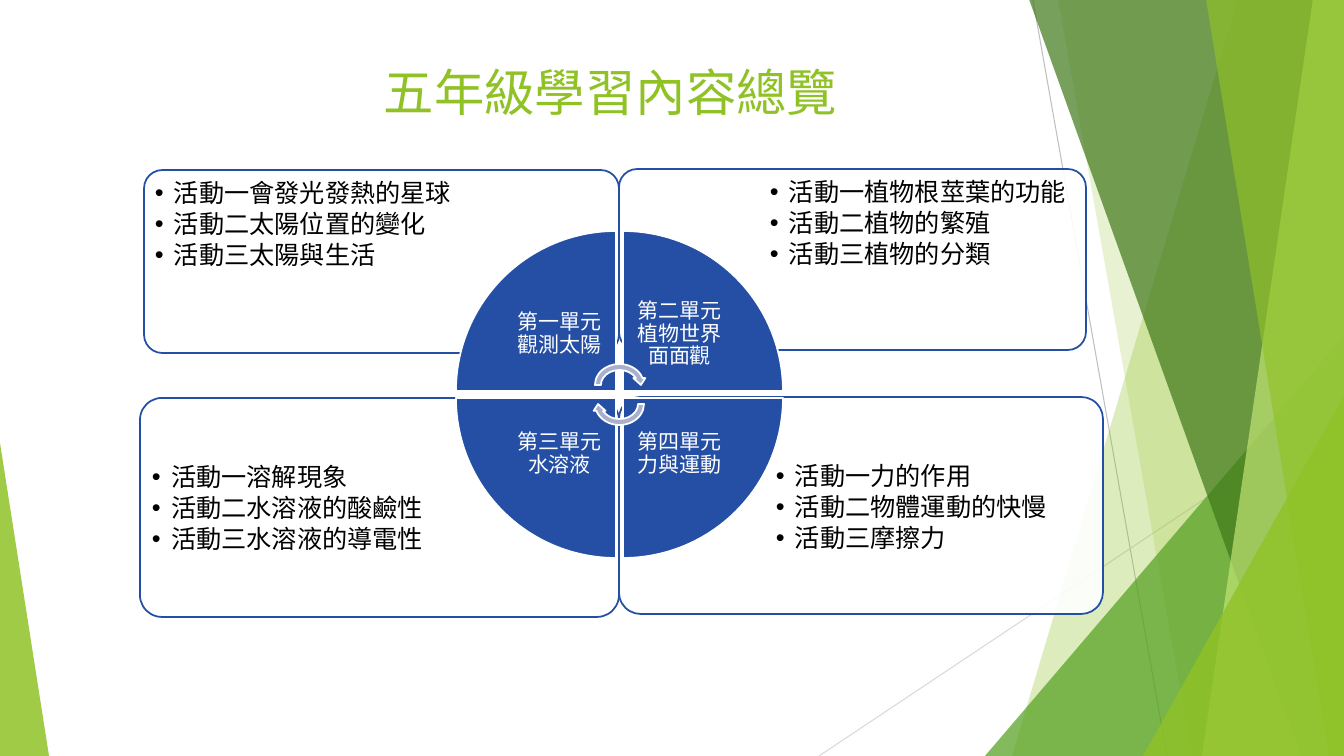
from lxml.etree import SubElement
from pptx import Presentation
from pptx.dml.color import RGBColor
from pptx.enum.shapes import MSO_CONNECTOR, MSO_SHAPE
from pptx.enum.text import MSO_ANCHOR, PP_ALIGN
from pptx.oxml.ns import qn
from pptx.util import Pt

PX = 12192000 / 1344
COLORS = {
    "lime": "90C226", "green": "54A021", "forest": "3F7819", "pale": "C0E474",
    "blue": "244FA4", "arrow": "A9B0CD", "white": "FFFFFF", "black": "000000",
    "gray": "BFBFBF", "light gray": "D9D9D9",
}
RGB = {name: RGBColor.from_string(value) for name, value in COLORS.items()}
BODY_FONT = "TeX Gyre Schola"


def px(*lengths):
    return [round(length * PX) for length in lengths]


def paint(shape, fill, opacity=100, line=None):
    shape.shadow.inherit = False
    shape.fill.solid()
    shape.fill.fore_color.rgb = RGB[fill]
    if opacity < 100:
        color = shape._element.spPr.find(qn("a:solidFill")).find(qn("a:srgbClr"))
        SubElement(color, qn("a:alpha"), val=str(opacity * 1000))
    if line:
        shape.line.color.rgb = RGB[line]
        shape.line.width = Pt(1.25)
    else:
        shape.line.fill.background()


prs = Presentation()
prs.slide_width, prs.slide_height = px(1344, 756)
slide = prs.slides.add_slide(prs.slide_layouts[5])
shapes = slide.shapes

for ends, color in [((1033, 0, 1167, 756), "gray"), ((1344, 406, 819, 756), "light gray")]:
    ray = shapes.add_connector(MSO_CONNECTOR.STRAIGHT, *px(*ends))
    ray.line.color.rgb = RGB[color]
    ray.line.width = Pt(0.75)
    SubElement(ray._element.spPr, qn("a:effectLst"))

facets = [
    ("band", (1238, 1012), "lime", 30),
    ("band", (1058, 1192), "lime", 20),
    ("corner", (985, 336, 359, 420, 1), "green", 72),
    ("band", (1029, 1301), "forest", 70),
    ("band", (1313, 1202), "pale", 70),
    ("band", (1206, 1329), "lime", 65),
    ("corner", (1143, 396, 201, 360, 1), "lime", 80),
    ("corner", (0, 443, 49, 313, 0), "lime", 85),
]
for kind, outline, color, opacity in facets:
    if kind == "band":
        top_x, bottom_x = outline
        builder = shapes.build_freeform(top_x, -1, scale=PX)
        builder.add_line_segments([(1344, -1), (1344, 756), (bottom_x, 756)])
        facet = builder.convert_to_shape()
    else:
        *box, apex = outline
        facet = shapes.add_shape(MSO_SHAPE.ISOSCELES_TRIANGLE, *px(*box))
        facet.adjustments[0] = apex
    paint(facet, color, opacity)

title = shapes.title
title.left, title.top, title.width, title.height = px(140, 12, 941, 166)
title.text_frame.text = "五年級學習內容總覽"
title.text_frame.vertical_anchor = MSO_ANCHOR.MIDDLE
heading = title.text_frame.paragraphs[0]
heading.alignment = PP_ALIGN.CENTER
heading.line_spacing = 0.9
heading.font.size = Pt(36)
heading.font.name = "Lato"
heading.font.color.rgb = RGB["lime"]

panels = [
    ((619, 397, 484, 217), (769, 457, 329, 153),
     ["活動一力的作用", "活動二物體運動的快慢", "活動三摩擦力"]),
    ((140, 398, 479, 219), (145, 458, 326, 154),
     ["活動一溶解現象", "活動二水溶液的酸鹼性", "活動三水溶液的導電性"]),
    ((619, 169, 467, 181), (763, 173, 319, 128),
     ["活動一植物根莖葉的功能", "活動二植物的繁殖", "活動三植物的分類"]),
    ((144, 170, 475, 183), (148, 174, 325, 130),
     ["活動一會發光發熱的星球", "活動二太陽位置的變化", "活動三太陽與生活"]),
]
units = [
    ("第一單元觀測太陽", 0, 0, 0),
    ("第二單元植物世界面面觀", 1, 0, 90),
    ("第四單元力與運動", 1, 1, 180),
    ("第三單元水溶液", 0, 1, 270),
]
texts = []
for panel_box, list_box, activities in panels:
    panel = shapes.add_shape(MSO_SHAPE.ROUNDED_RECTANGLE, *px(*panel_box))
    panel.adjustments[0] = 0.1
    paint(panel, "white", 90, "blue")
    frame = shapes.add_textbox(*px(*list_box)).text_frame
    frame.text = "\n".join(activities)
    texts.append((frame, 7, 18, "black"))
    for number, activity in enumerate(frame.paragraphs):
        activity.space_before = Pt(2.7 if number else 0)
        props = activity._p.get_or_add_pPr()
        indent, = px(19)
        props.set("marL", str(indent))
        props.set("indent", str(-indent))
        bullet_color = SubElement(props, qn("a:buClr"))
        SubElement(bullet_color, qn("a:srgbClr"), val=COLORS["black"])
        SubElement(props, qn("a:buFont"), typeface="Arial")
        SubElement(props, qn("a:buChar"), char="•")

for unit, column, row, turn in units:
    wedge = shapes.add_shape(
        MSO_SHAPE.PIE_WEDGE, *px(456 + 167 * column, 231 + 167 * row, 160, 160))
    wedge.rotation = turn
    paint(wedge, "blue", line="white")
    frame = shapes.add_textbox(*px(503 + 120 * column, 278 + 120 * row, 113, 113)).text_frame
    frame.text = unit
    frame.vertical_anchor = MSO_ANCHOR.MIDDLE
    frame.paragraphs[0].alignment = PP_ALIGN.CENTER
    texts.append((frame, 12, 15, "white"))

for frame, inset, size, color in texts:
    frame.word_wrap = True
    frame.margin_left, frame.margin_top, frame.margin_right, frame.margin_bottom = px(*[inset] * 4)
    for paragraph in frame.paragraphs:
        paragraph.line_spacing = 0.9
        paragraph.font.size = Pt(size)
        paragraph.font.name = BODY_FONT
        paragraph.font.color.rgb = RGB[color]

for top, turn in [(361, 0), (380, 180)]:
    cycle_arrow = shapes.add_shape(MSO_SHAPE.CIRCULAR_ARROW, *px(592, top, 55, 48))
    cycle_arrow.rotation = turn
    paint(cycle_arrow, "arrow", line="white")

prs.save("out.pptx")
